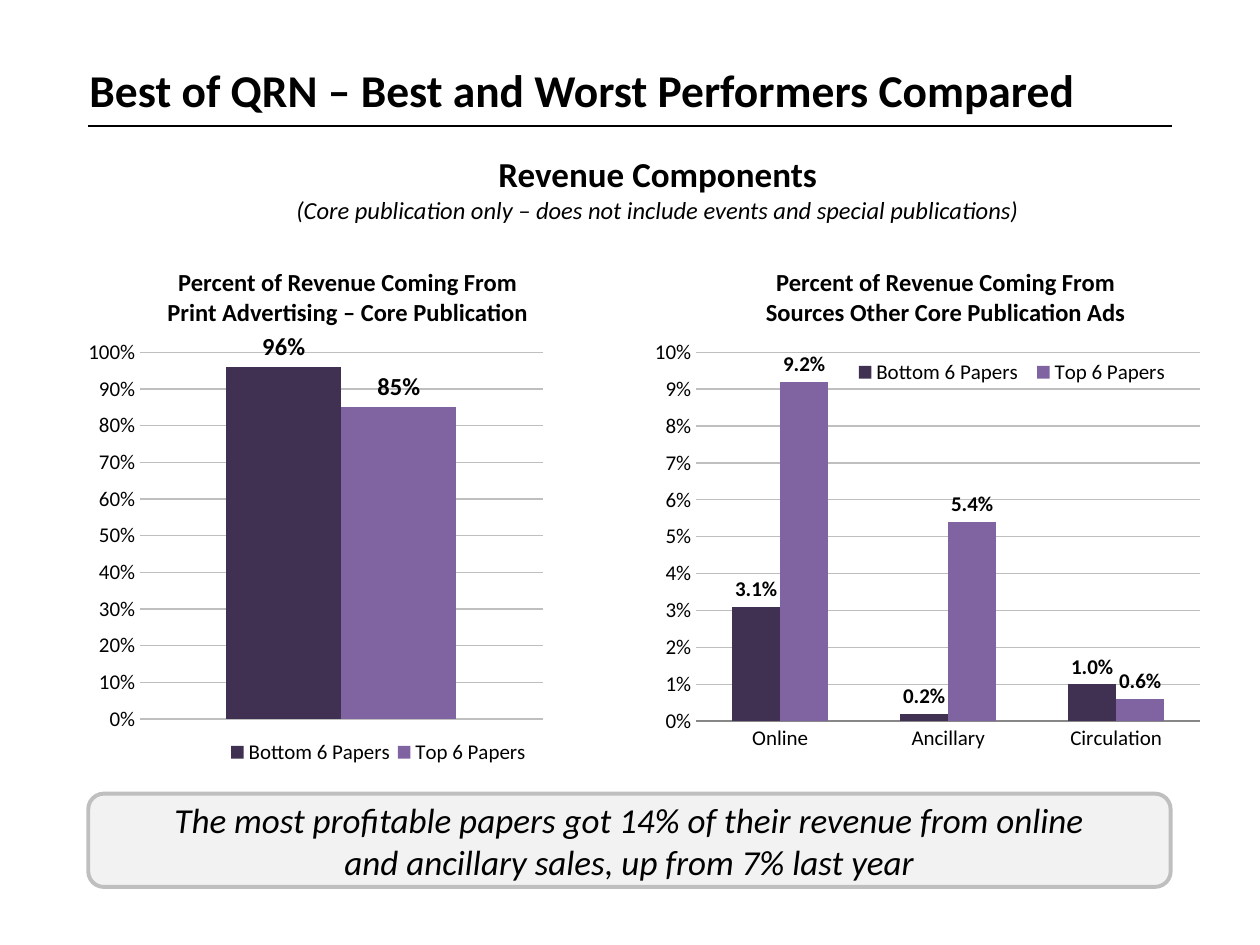
from lxml.etree import SubElement
from pptx import Presentation
from pptx.chart.data import CategoryChartData
from pptx.dml.color import RGBColor
from pptx.enum.chart import XL_CHART_TYPE as ChartType, XL_LABEL_POSITION as LabelPos
from pptx.enum.chart import XL_LEGEND_POSITION as LegendPos, XL_TICK_MARK as TickMark
from pptx.enum.shapes import MSO_CONNECTOR, MSO_SHAPE
from pptx.enum.text import MSO_ANCHOR, PP_ALIGN
from pptx.oxml import parse_xml
from pptx.oxml.ns import nsdecls, qn
from pptx.util import Cm, Pt

# Content
TITLE = "Best of QRN – Best and Worst Performers Compared"
HEADING = "Revenue Components"
SCOPE = "(Core publication only – does not include events and special publications)"
TAKEAWAY = ["The most profitable papers got 14% of their revenue from online",
            "and ancillary sales, up from 7% last year"]
SERIES = ["Bottom 6 Papers", "Top 6 Papers"]
# Boxes are left, top, width, height in cm; layouts are fractions of the chart
CHARTS = [
    dict(caption="Percent of Revenue Coming From Print Advertising – Core Publication",
         caption_box=(3.1, 5.26, 7.82, 1.45), box=(1.78, 5.64, 9.35, 10.08),
         categories=["1"], values=[[0.96], [0.85]], show_categories=False,
         top=1, step=0.1, label_format="0%", label_size=14,
         plot=(0.11, 0.145, 0.87, 0.734), legend=(0.29, 0.91, 0.67, 0.07)),
    dict(caption="Percent of Revenue Coming From Sources Other Core Publication Ads",
         caption_box=(14.71, 5.26, 8.71, 1.45), box=(12.75, 5.64, 11.68, 10.08),
         categories=["Online", "Ancillary", "Circulation"],
         values=[[0.031, 0.002, 0.01], [0.092, 0.054, 0.006]], show_categories=True,
         top=0.1, step=0.01, label_format="0.0%", label_size=12,
         plot=(0.11, 0.145, 0.87, 0.738), legend=(0.37, 0.15, 0.57, 0.07)),
]

THEME = dict(
    font="Calibri", text=RGBColor(0, 0, 0), grid=RGBColor(0xBF, 0xBF, 0xBF),
    panel=RGBColor(0xF2, 0xF2, 0xF2),
    bars=[RGBColor(0x40, 0x31, 0x52), RGBColor(0x80, 0x64, 0xA2)],
    title=26, heading=20, body=14, axis=12,
)


def set_font(font, size, bold=False, italic=False):
    font.name, font.size = THEME["font"], Pt(size)
    font.bold, font.italic = bold, italic
    font.color.rgb = THEME["text"]


def write(frame, lines, align=PP_ALIGN.CENTER):
    """Fill a frame with (text, size, bold, italic) lines."""
    frame.word_wrap = True
    for i, (text, *style) in enumerate(lines):
        paragraph = frame.paragraphs[0] if i == 0 else frame.add_paragraph()
        paragraph.text, paragraph.alignment = text, align
        set_font(paragraph.font, *style)


def add_text(slide, box, lines):
    write(slide.shapes.add_textbox(*map(Cm, box)).text_frame, lines)


def place(element, index, fractions, inner=False):
    """Give a plot area or legend a fixed place within its chart."""
    for old in element.findall(qn("c:layout")):
        element.remove(old)
    layout = parse_xml(f"<c:layout {nsdecls('c')}><c:manualLayout/></c:layout>")
    settings = [("layoutTarget", "inner")] if inner else []
    settings += [("xMode", "edge"), ("yMode", "edge"), *zip("xywh", fractions)]
    for tag, value in settings:
        SubElement(layout[0], qn(f"c:{tag}")).set("val", str(value))
    element.insert(index, layout)


def add_bars(slide, item):
    data = CategoryChartData(number_format=item["label_format"])
    data.categories = item["categories"]
    for name, values in zip(SERIES, item["values"]):
        data.add_series(name, values)
    chart = slide.shapes.add_chart(
        ChartType.COLUMN_CLUSTERED, *map(Cm, item["box"]), data).chart
    chart.has_title = False
    set_font(chart.font, THEME["axis"])

    # Axes
    percent, groups = chart.value_axis, chart.category_axis
    percent.minimum_scale, percent.maximum_scale = 0, item["top"]
    percent.major_unit = item["step"]
    percent.tick_labels.number_format = "0%"
    percent.tick_labels.number_format_is_linked = False
    percent.format.line.fill.background()
    grid = percent.major_gridlines.format.line
    grid.color.rgb, grid.width = THEME["grid"], Pt(0.75)
    groups.visible = item["show_categories"]
    for axis in (percent, groups):
        axis.major_tick_mark = TickMark.NONE
        set_font(axis.tick_labels.font, THEME["axis"])

    # Bars and their labels
    plot = chart.plots[0]
    plot.gap_width, plot.overlap, plot.vary_by_categories = 150, 0, False
    for series, color in zip(plot.series, THEME["bars"]):
        series.format.fill.solid()
        series.format.fill.fore_color.rgb = color
        labels = series.data_labels
        labels.show_value, labels.position = True, LabelPos.OUTSIDE_END
        labels.number_format = item["label_format"]
        labels.number_format_is_linked = False
        set_font(labels.font, item["label_size"], bold=True)

    # Legend and plot placement
    chart.has_legend = True
    legend = chart.legend
    legend.position, legend.include_in_layout = LegendPos.BOTTOM, False
    set_font(legend.font, THEME["axis"])
    root = chart._chartSpace
    place(root.find(".//" + qn("c:legend")), 1, item["legend"])
    place(root.find(".//" + qn("c:plotArea")), 0, item["plot"], inner=True)


def main():
    deck = Presentation()
    deck.slide_width, deck.slide_height = Cm(25.4), Cm(19.05)
    slide = deck.slides.add_slide(deck.slide_layouts[5])

    # Title and rule
    title = slide.shapes.title
    title.left, title.top, title.width, title.height = map(Cm, (1.55, 1.07, 21.6, 1.47))
    write(title.text_frame, [(TITLE, THEME["title"], True)], PP_ALIGN.LEFT)
    title.text_frame.vertical_anchor = MSO_ANCHOR.MIDDLE
    rule = slide.shapes.add_connector(
        MSO_CONNECTOR.STRAIGHT, *map(Cm, (1.78, 2.54, 23.62, 2.54)))
    rule.line.color.rgb, rule.line.width = THEME["text"], Pt(0.75)
    SubElement(rule._element.spPr, qn("a:effectLst"))

    # Heading
    add_text(slide, (5.46, 2.95, 15.6, 1.7),
             [(HEADING, THEME["heading"], True), (SCOPE, THEME["body"], False, True)])

    # Charts with captions
    for item in CHARTS:
        add_bars(slide, item)
        add_text(slide, item["caption_box"], [(item["caption"], THEME["body"], True)])

    # Takeaway
    panel = slide.shapes.add_shape(
        MSO_SHAPE.ROUNDED_RECTANGLE, *map(Cm, (1.78, 16, 21.82, 1.88)))
    panel.shadow.inherit = False
    panel.fill.solid()
    panel.fill.fore_color.rgb = THEME["panel"]
    panel.line.color.rgb, panel.line.width = THEME["grid"], Pt(2.25)
    write(panel.text_frame, [(line, THEME["heading"], False, True) for line in TAKEAWAY])
    panel.text_frame.vertical_anchor = MSO_ANCHOR.MIDDLE

    deck.save("out.pptx")


if __name__ == "__main__":
    main()
